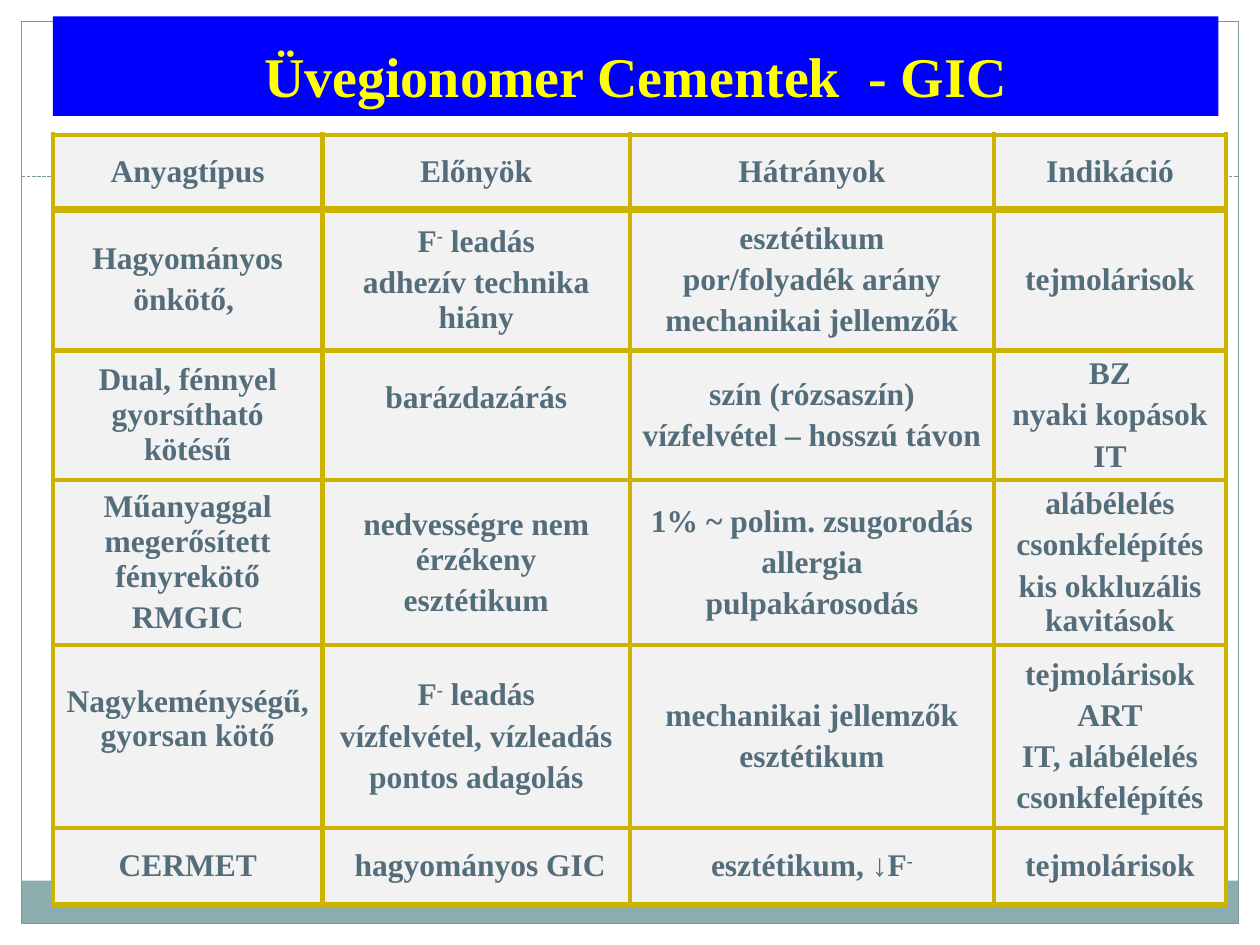
from lxml import etree
from pptx import Presentation
from pptx import util as u
from pptx.dml.color import RGBColor
from pptx.enum import dml, shapes, text
from pptx.oxml import ns

COLORS = {
    "title_fill": "0000FF", "title_text": "FFFF00", "frame": "7C999A", "band": "8CADAE",
    "cell": "F2F2F2", "cell_text": "546D7A", "border": "CCB400",
}
FONT = "Times New Roman"
COLUMNS = [2.14, 2.44, 2.89, 1.84]
ROWS = [0.59, 1.12, 1.03, 1.31, 1.45, 0.61]
RAISED_CELLS = {(2, 1), (4, 0)}
FLUORIDE = [("F", False), ("-", True), (" leadás", False)]
CONTENT = [
    [["Anyagtípus"], ["Előnyök"], ["Hátrányok"], ["Indikáció"]],
    [["Hagyományos", "önkötő, "], [FLUORIDE, "adhezív technika hiány"],
     ["esztétikum", "por/folyadék arány", "mechanikai jellemzők"], ["tejmolárisok"]],
    [["Dual, fénnyel gyorsítható kötésű"], ["barázdazárás"],
     ["szín (rózsaszín)", "vízfelvétel – hosszú távon"], ["BZ", "nyaki kopások", "IT"]],
    [["Műanyaggal megerősített fényrekötő", "RMGIC"],
     ["nedvességre nem érzékeny", "esztétikum"],
     ["1% ~ polim. zsugorodás", "allergia", "pulpakárosodás"],
     ["alábélelés", "csonkfelépítés", "kis okkluzális kavitások"]],
    [["Nagykeménységű, gyorsan kötő"],
     [FLUORIDE, "vízfelvétel, vízleadás", "pontos adagolás"],
     ["mechanikai jellemzők", "esztétikum"],
     ["tejmolárisok", "ART", "IT, alábélelés", "csonkfelépítés"]],
    [["CERMET"], [" hagyományos GIC"],
     [[("esztétikum, ↓F", False), ("-", True)]], ["tejmolárisok"]],
]


def color(name):
    """Return the named palette colour."""
    return RGBColor.from_string(COLORS[name])


def write_text(frame, paragraphs, *, size, ink, before=0, spacing=1.0):
    """Fill a text frame with centred bold paragraphs of plain or raised spans."""
    for index, content in enumerate(paragraphs):
        para = frame.add_paragraph() if index else frame.paragraphs[0]
        para.alignment = text.PP_ALIGN.CENTER
        para.space_before = u.Pt(before)
        para.line_spacing = spacing
        for wording, raised in [(content, False)] if isinstance(content, str) else content:
            span = para.add_run()
            span.text = wording
            span.font.name, span.font.size, span.font.bold = FONT, u.Pt(size), True
            span.font.color.rgb = color(ink)
            if raised:
                span.font._element.set("baseline", "30000")


def add_box(page, box, fill=None, line=None):
    """Add a rectangle with optional fill and outline."""
    shape = page.shapes.add_shape(shapes.MSO_SHAPE.RECTANGLE, *map(u.Inches, box))
    shape.shadow.inherit = False
    for part, name in ((shape.fill, fill), (shape.line.fill, line)):
        if name:
            part.solid()
            part.fore_color.rgb = color(name)
        else:
            part.background()
    if line:
        shape.line.width = u.Pt(0.75)
    return shape


def add_backdrop(page, box):
    """Draw the bottom band, the page frame and its dashed rule."""
    left, top, width, height = box
    band = 0.34
    add_box(page, (left, top + height - band, width, band), fill="band")
    add_box(page, box, line="frame")
    ends = (left, 1.4, left + width, 1.4)
    rule = page.shapes.add_connector(shapes.MSO_CONNECTOR.STRAIGHT, *map(u.Inches, ends))
    rule.line.color.rgb = color("frame")
    rule.line.width = u.Pt(0.75)
    rule.line.dash_style = dml.MSO_LINE.SQUARE_DOT
    etree.SubElement(rule._element.spPr, ns.qn("a:effectLst"))


def add_title(page, box, wording):
    """Place the title bar with its text at the bottom."""
    frame = add_box(page, box, fill="title_fill").text_frame
    frame.word_wrap = True
    frame.vertical_anchor = text.MSO_ANCHOR.BOTTOM
    write_text(frame, [wording], size=32, ink="title_text", spacing=0.9)


def set_borders(cell, widths):
    """Draw solid cell borders from a mapping of side to points."""
    properties = cell._tc.get_or_add_tcPr()
    for side, width in widths.items():
        line = etree.SubElement(properties, ns.qn(f"a:ln{side}"), w=str(u.Pt(width)))
        fill = etree.SubElement(line, ns.qn("a:solidFill"))
        etree.SubElement(fill, ns.qn("a:srgbClr"), val=COLORS["border"])


def add_cement_table(page, box):
    """Build the comparison table of cement types."""
    table = page.shapes.add_table(len(ROWS), len(COLUMNS), *map(u.Inches, box)).table
    table.first_row = table.horz_banding = False
    for column, width in zip(table.columns, COLUMNS):
        column.width = u.Inches(width)
    for row, height in zip(table.rows, ROWS):
        row.height = u.Inches(height)
    for row, entries in enumerate(CONTENT):
        widths = {"L": 3, "R": 3, "T": 4.5 if row == 1 else 3, "B": 4.5 if row == 0 else 3}
        for column, paragraphs in enumerate(entries):
            cell = table.cell(row, column)
            set_borders(cell, widths)
            cell.fill.solid()
            cell.fill.fore_color.rgb = color("cell")
            cell.vertical_anchor = text.MSO_ANCHOR.MIDDLE
            if (row, column) in RAISED_CELLS:
                cell.margin_bottom = u.Inches(0.33)
            write_text(cell.text_frame, paragraphs, size=18, ink="cell_text", before=3.6)


def main():
    """Build and save the deck."""
    deck = Presentation()
    deck.slide_width, deck.slide_height = u.Inches(10), u.Inches(7.5)
    page = deck.slides.add_slide(deck.slide_layouts[6])
    add_backdrop(page, (0.17, 0.17, 9.66, 7.16))
    add_title(page, (0.42, 0.13, 9.25, 0.79), "Üvegionomer Cementek  - GIC")
    add_cement_table(page, (0.42, 1.07, sum(COLUMNS), sum(ROWS)))
    deck.save("out.pptx")


if __name__ == "__main__":
    main()
